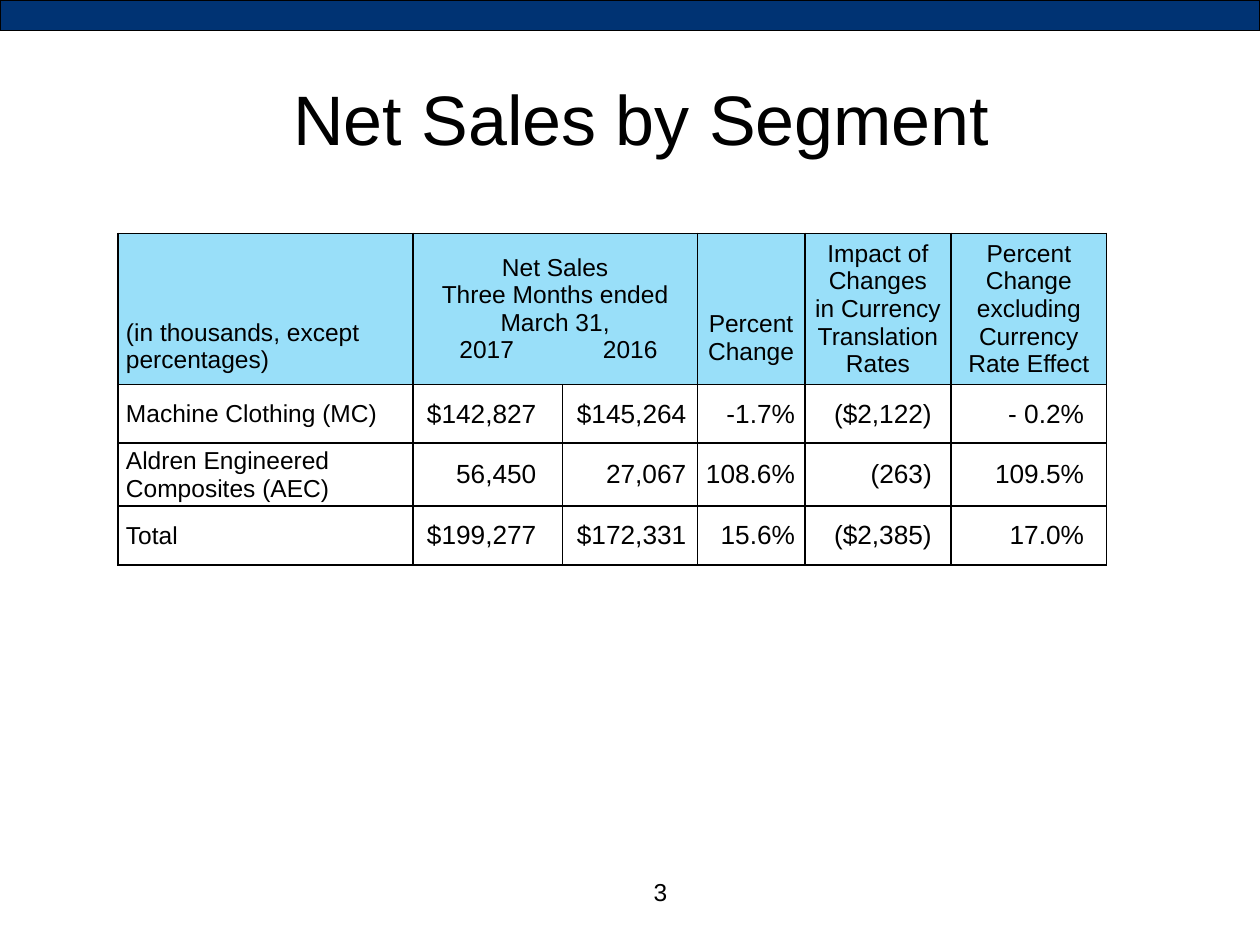
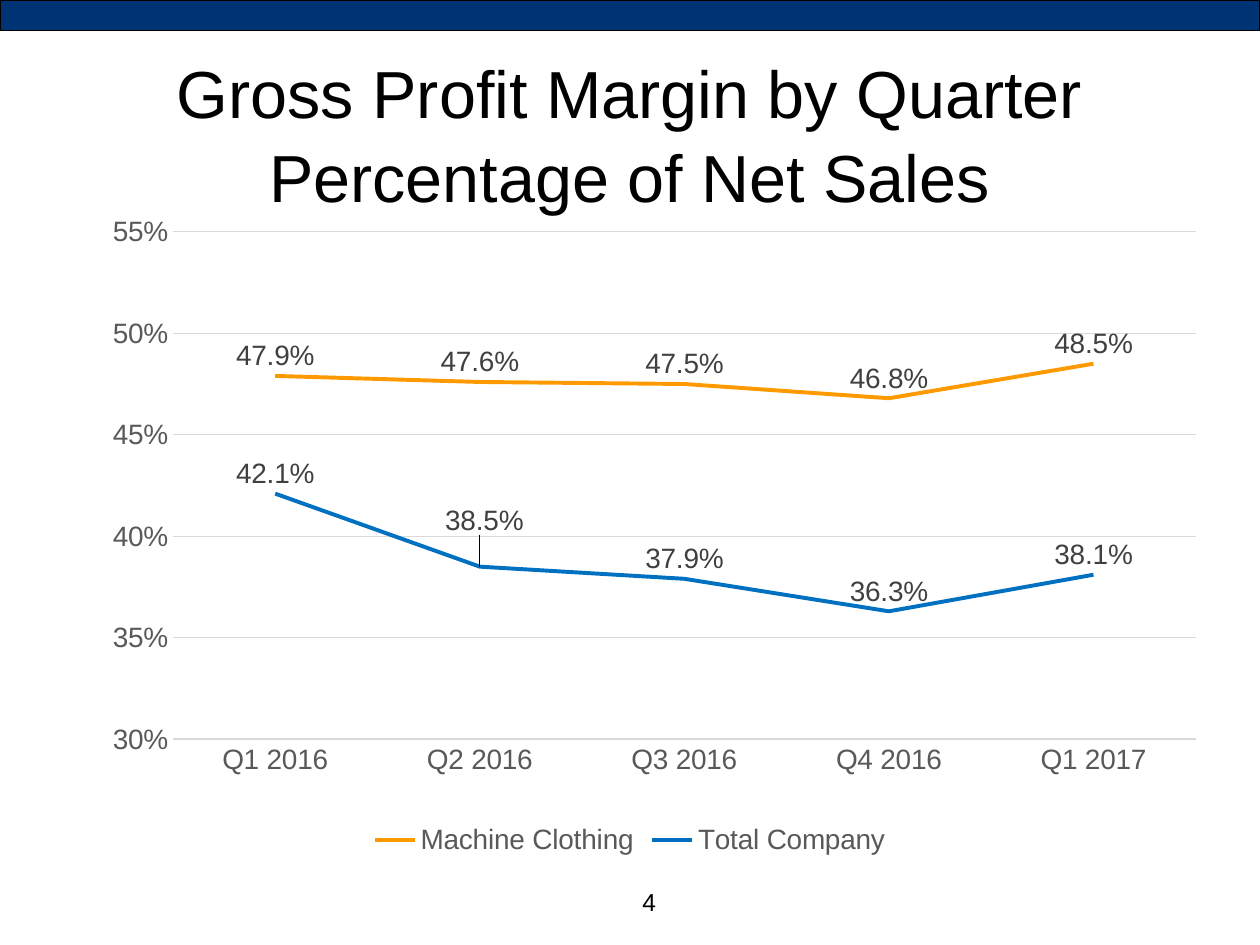
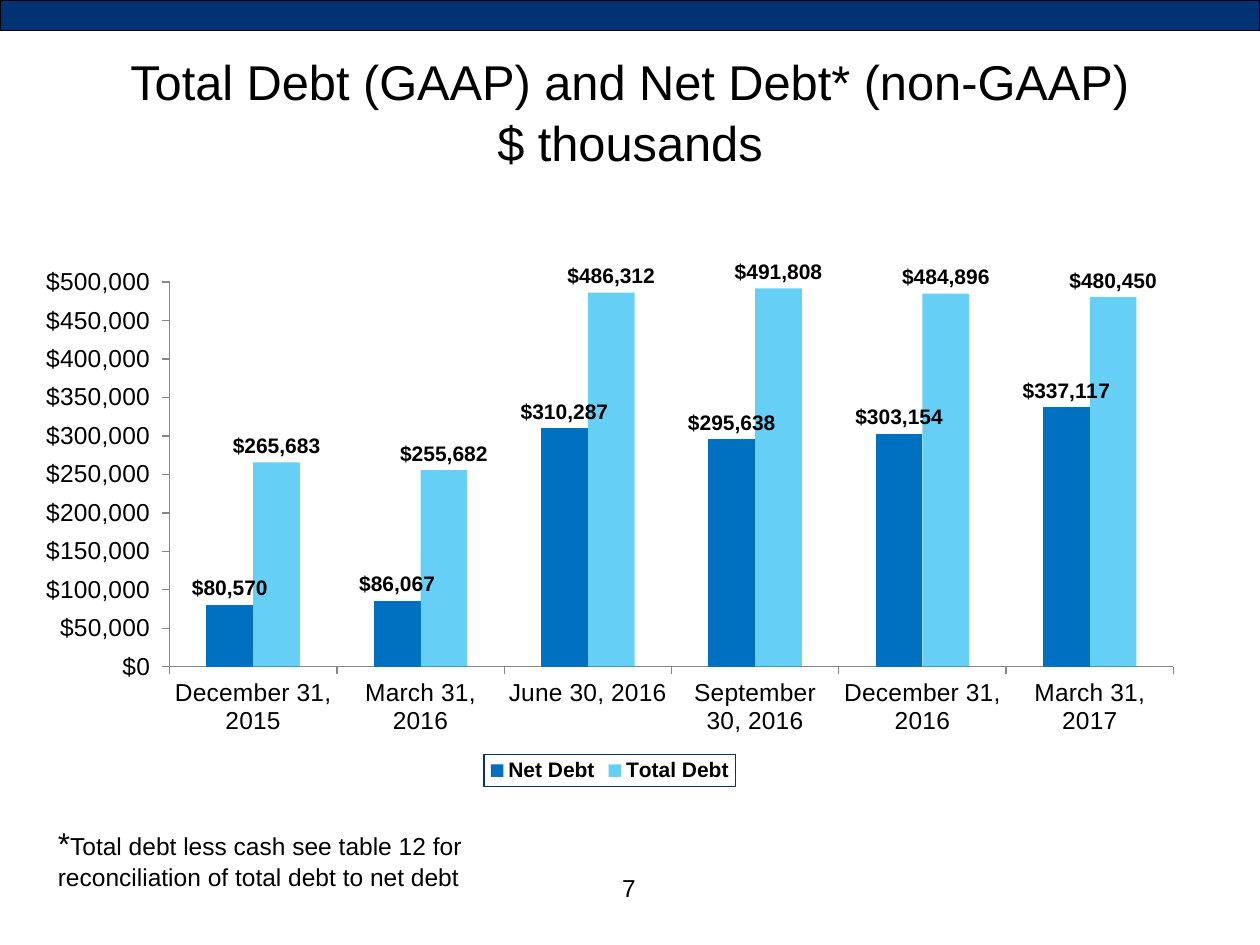
import dataclasses
from typing import Any, NamedTuple, Optional

import lxml.etree
import pptx
import pptx.chart.data
import pptx.dml.color
import pptx.enum.chart
import pptx.enum.shapes
import pptx.enum.text
import pptx.oxml.ns
import pptx.util

Pt = pptx.util.Pt
RGB = pptx.dml.color.RGBColor
Align = pptx.enum.text.PP_ALIGN
Anchor = pptx.enum.text.MSO_ANCHOR
Tick = pptx.enum.chart.XL_TICK_MARK
ChartType = pptx.enum.chart.XL_CHART_TYPE
LabelPosition = pptx.enum.chart.XL_LABEL_POSITION
qn = pptx.oxml.ns.qn


@dataclasses.dataclass(frozen=True)
class Theme:
    font: str = "Arial"
    black: RGB = RGB(0, 0, 0)
    navy: RGB = RGB(0x00, 0x33, 0x73)
    blue: RGB = RGB(0x00, 0x70, 0xC0)
    sky: RGB = RGB(0x00, 0xB0, 0xF0)
    orange: RGB = RGB(0xFF, 0x99, 0x00)
    grid: RGB = RGB(0xD9, 0xD9, 0xD9)
    axis: RGB = RGB(0x86, 0x86, 0x86)
    axis_text: RGB = RGB(0x59, 0x59, 0x59)
    label_text: RGB = RGB(0x40, 0x40, 0x40)
    body: float = 14
    figure: float = 15
    margin_chart: float = 16
    debt_label: float = 12
    asterisk: float = 18


THEME = Theme()


class Box(NamedTuple):
    left: float
    top: float
    width: float
    height: float

    def lengths(self) -> list[pptx.util.Length]:
        return [Pt(value) for value in self]


class Page(NamedTuple):
    title: str
    title_size: float
    title_box: Box
    number: str
    number_box: Box


class Column(NamedTuple):
    width: float
    right_margin: float
    header: list[str]
    anchor: Any = Anchor.MIDDLE
    bottom_margin: float = 0


class Line(NamedTuple):
    """One series of a chart with its colour and opacity in percent."""
    name: str
    values: list[float]
    colour: RGB
    opacity: int = 100


TITLE_BOX = Box(36, 21.6, 648, 90)
SALES = Page("Net Sales by Segment", 40, Box(42.5, 34.6, 648, 90),
             "3", Box(366.5, 497.5, 24.5, 24.5))
MARGIN = Page("Gross Profit Margin by Quarter\vPercentage of Net Sales", 38, TITLE_BOX,
              "4", Box(360, 503.3, 34, 24.5))
DEBT = Page("Total Debt (GAAP) and Net Debt* (non-GAAP)\v$ thousands", 27.9, TITLE_BOX,
            "7", Box(348.5, 495.4, 22.5, 24.5))

YEAR_STOPS = (37.7, 119.7)
SALES_COLUMNS = [
    Column(168.5, 4.5, ["(in thousands, except percentages)"], Anchor.BOTTOM, 6),
    Column(85.5, 15, ["Net Sales", "Three Months ended", "March 31,", "\t2017\t2016"]),
    Column(77, 6.3, []),
    Column(61.5, 5.7, ["Percent", "Change"], Anchor.BOTTOM, 11),
    Column(83.5, 11, ["Impact of Changes", "in Currency", "Translation Rates"]),
    Column(89, 13, ["Percent Change", "excluding Currency Rate Effect"]),
]
SALES_ROWS = [
    ["Machine Clothing (MC)", "$142,827", "$145,264", "-1.7%", "($2,122)", "- 0.2%"],
    ["Aldren Engineered Composites (AEC)", "56,450", "27,067", "108.6%", "(263)", "109.5%"],
    ["Total", "$199,277", "$172,331", "15.6%", "($2,385)", "17.0%"],
]
ROW_HEIGHTS = [86.5, 33.5, 36, 33.5]


def write(para: Any, text: str, *, size: float = THEME.body, align: Any = None,
          spacing: Optional[float] = None) -> None:
    """Append text to a paragraph; a vertical tab breaks the line."""
    if align is not None:
        para.alignment = align
    if spacing is not None:
        para.line_spacing = spacing
    for index, part in enumerate(text.split("\v")):
        if index:
            para.add_line_break()
        span = para.add_run()
        span.text = part
        style_font(span.font, size, THEME.black)


def style_font(font: Any, size: float, colour: RGB, bold: bool = False) -> None:
    font.name = THEME.font
    font.size = Pt(size)
    font.bold = bold
    font.color.rgb = colour


def add_box(slide: Any, box: Box) -> Any:
    frame = slide.shapes.add_textbox(*box.lengths()).text_frame
    frame.word_wrap = True
    return frame


def add_page(deck: Any, page: Page) -> Any:
    """Add a blank slide with the top band, title and page number."""
    slide = deck.slides.add_slide(deck.slide_layouts[6])
    band = slide.shapes.add_shape(pptx.enum.shapes.MSO_SHAPE.RECTANGLE,
                                  *Box(0, 0, 720, 17.3).lengths())
    band.shadow.inherit = False
    band.fill.solid()
    band.fill.fore_color.rgb = THEME.navy
    band.line.color.rgb = THEME.black
    band.line.width = Pt(0.75)
    title = add_box(slide, page.title_box)
    title.margin_top = Pt(6)
    write(title.paragraphs[0], page.title, size=page.title_size, align=Align.CENTER,
          spacing=1.05)
    write(add_box(slide, page.number_box).paragraphs[0], page.number)
    return slide


def add_element(parent: Any, tag: str, **attributes: str) -> Any:
    return lxml.etree.SubElement(parent, qn(tag), attributes)


def fill_colour(fill: Any, properties: Any, colour: RGB, opacity: int) -> None:
    """Fill with a colour; properties is the element that holds the fill."""
    fill.solid()
    fill.fore_color.rgb = colour
    if opacity < 100:
        swatch = properties.find(qn("a:solidFill"))[0]
        add_element(swatch, "a:alpha", val=str(opacity * 1000))


def add_outline(parent: Any, tag: str, colour: RGB, width: float) -> None:
    line = add_element(parent, tag, w=str(Pt(width)))
    add_element(add_element(line, "a:solidFill"), "a:srgbClr", val=str(colour))


def format_cell(cell: Any, column: Column) -> None:
    cell.margin_left = Pt(4.5)
    cell.margin_right = Pt(column.right_margin)
    cell.margin_top = cell.margin_bottom = 0
    cell.vertical_anchor = Anchor.MIDDLE
    for side in "LRTB":
        add_outline(cell._tc.tcPr, f"a:ln{side}", THEME.black, 1)
    cell.fill.background()


def write_header(cell: Any, column: Column, align: Any) -> None:
    cell.margin_right = Pt(4.5)
    cell.margin_bottom = Pt(column.bottom_margin)
    cell.vertical_anchor = column.anchor
    frame = cell.text_frame
    for index, text in enumerate(column.header):
        para = frame.add_paragraph() if index else frame.paragraphs[0]
        if "\t" in text:
            stops = add_element(para._p.get_or_add_pPr(), "a:tabLst")
            for stop in YEAR_STOPS:
                add_element(stops, "a:tab", pos=str(Pt(stop)), algn="ctr")
            write(para, text, align=Align.LEFT)
        else:
            write(para, text, align=align)


def add_sales_table(slide: Any) -> None:
    box = Box(67.5, 133.3, sum(column.width for column in SALES_COLUMNS), sum(ROW_HEIGHTS))
    table = slide.shapes.add_table(len(ROW_HEIGHTS), len(SALES_COLUMNS), *box.lengths()).table
    table.first_row = table.horz_banding = False
    for row, height in zip(table.rows, ROW_HEIGHTS):
        row.height = Pt(height)
    for index, column in enumerate(SALES_COLUMNS):
        table.columns[index].width = Pt(column.width)
        for row in range(len(ROW_HEIGHTS)):
            format_cell(table.cell(row, index), column)
        header = table.cell(0, index)
        fill_colour(header.fill, header._tc.tcPr, THEME.sky, 40)
        write_header(header, column, Align.CENTER if index else Align.LEFT)
        for row, values in enumerate(SALES_ROWS, 1):
            write(table.cell(row, index).text_frame.paragraphs[0], values[index],
                  size=THEME.figure if index else THEME.body,
                  align=Align.RIGHT if index else Align.LEFT)
    table.cell(0, 1).merge(table.cell(0, 2))


def make_layout(**values: str) -> Any:
    """Build a manual chart layout from its settings, in schema order."""
    layout = lxml.etree.Element(qn("c:layout"))
    manual = add_element(layout, "c:manualLayout")
    for name, value in values.items():
        add_element(manual, f"c:{name}", val=value)
    return layout


def place_plot(chart: Any, x: float, y: float, w: float, h: float) -> None:
    area = chart._chartSpace.chart.plotArea
    for old in area.findall(qn("c:layout")):
        area.remove(old)
    area.insert(0, make_layout(layoutTarget="inner", xMode="edge", yMode="edge",
                               x=str(x), y=str(y), w=str(w), h=str(h)))


def add_chart(slide: Any, kind: Any, box: Box, categories: list[str],
              lines: list[Line], size: float, colour: RGB, bold: bool) -> Any:
    """Add a chart whose legend stands at the bottom."""
    data = pptx.chart.data.CategoryChartData()
    data.categories = categories
    for line in lines:
        data.add_series(line.name, line.values)
    chart = slide.shapes.add_chart(kind, *box.lengths(), data).chart
    chart.has_title = False
    chart.has_legend = True
    chart.legend.position = pptx.enum.chart.XL_LEGEND_POSITION.BOTTOM
    chart.legend.include_in_layout = False
    style_font(chart.font, size, colour, bold)
    style_font(chart.legend.font, size, colour, bold)
    chart.plots[0].vary_by_categories = False
    return chart


def format_axis(axis: Any, size: float, colour: RGB, tick: Any,
                line: Optional[RGB]) -> None:
    style_font(axis.tick_labels.font, size, colour)
    axis.major_tick_mark = tick
    axis.minor_tick_mark = Tick.NONE
    if line is None:
        axis.format.line.fill.background()
    else:
        axis.format.line.color.rgb = line
        axis.format.line.width = Pt(0.75)


def scale_axis(axis: Any, low: float, high: float, step: float, number_format: str) -> None:
    axis.minimum_scale, axis.maximum_scale, axis.major_unit = low, high, step
    axis.tick_labels.number_format = number_format
    axis.tick_labels.number_format_is_linked = False


def label_series(series: Any, number_format: str, position: Any, size: float,
                 colour: RGB, bold: bool) -> None:
    labels = series.data_labels
    labels.show_value = True
    labels.number_format = number_format
    labels.number_format_is_linked = False
    labels.position = position
    style_font(labels.font, size, colour, bold)


def shift_label(series: Any, index: int, x: float, y: float, number_format: str) -> None:
    """Move one data label by fractions of the chart's size."""
    label = series.points[index].data_label
    style_font(label.font, THEME.margin_chart, THEME.label_text)
    label.position = LabelPosition.ABOVE
    element = series._element.find(qn("c:dLbls")).find(qn("c:dLbl"))
    element.insert(1, make_layout(x=str(x), y=str(y)))
    code = lxml.etree.Element(qn("c:numFmt"), formatCode=number_format, sourceLinked="0")
    element.insert(2, code)


def add_margin_chart(slide: Any) -> None:
    lines = [Line("Machine Clothing", [0.479, 0.476, 0.475, 0.468, 0.485], THEME.orange),
             Line("Total Company", [0.421, 0.385, 0.379, 0.363, 0.381], THEME.blue)]
    quarters = ["Q1 2016", "Q2 2016", "Q3 2016", "Q4 2016", "Q1 2017"]
    size = THEME.margin_chart
    chart = add_chart(slide, ChartType.LINE, Box(36, 121, 648, 370.8), quarters, lines,
                      size, THEME.axis_text, False)
    place_plot(chart, 0.097, 0.031, 0.902, 0.782)
    format_axis(chart.category_axis, size, THEME.axis_text, Tick.NONE, THEME.grid)
    axis = chart.value_axis
    format_axis(axis, size, THEME.axis_text, Tick.NONE, None)
    scale_axis(axis, 0.3, 0.55, 0.05, "0%")
    axis.major_gridlines.format.line.color.rgb = THEME.grid
    axis.major_gridlines.format.line.width = Pt(0.75)
    for series, line in zip(chart.plots[0].series, lines):
        series.smooth = False
        series.marker.style = pptx.enum.chart.XL_MARKER_STYLE.NONE
        series.format.line.color.rgb = line.colour
        series.format.line.width = Pt(2.25)
        label_series(series, "0.0%", LabelPosition.ABOVE, size, THEME.label_text, False)
    shift_label(chart.plots[0].series[1], 1, 0.004, -0.04, "0.0%")


def add_debt_chart(slide: Any) -> None:
    lines = [Line("Net Debt", [80570, 86067, 310287, 295638, 303154, 337117], THEME.blue),
             Line("Total Debt", [265683, 255682, 486312, 491808, 484896, 480450],
                  THEME.sky, 60)]
    dates = ["December 31, 2015", "March 31, 2016", "June 30, 2016",
             "September 30, 2016", "December 31, 2016", "March 31, 2017"]
    size = THEME.debt_label
    chart = add_chart(slide, ChartType.COLUMN_CLUSTERED, Box(13, 147.6, 671, 302.4), dates,
                      lines, size, THEME.black, True)
    place_plot(chart, 0.125, 0.045, 0.855, 0.728)
    for axis in (chart.category_axis, chart.value_axis):
        format_axis(axis, THEME.body, THEME.black, Tick.OUTSIDE, THEME.axis)
    scale_axis(chart.value_axis, 0, 500000, 50000, '"$"#,##0_)')
    chart.value_axis.has_major_gridlines = False
    chart.plots[0].gap_width = 158
    chart.plots[0].overlap = 0
    for series, line in zip(chart.plots[0].series, lines):
        properties = series._element.get_or_add_spPr()
        fill_colour(series.format.fill, properties, line.colour, line.opacity)
        label_series(series, '"$"#,##0', LabelPosition.OUTSIDE_END, size, THEME.black, True)
    frame = lxml.etree.Element(qn("c:spPr"))
    add_outline(frame, "a:ln", THEME.navy, 0.75)
    chart.legend._element.find(qn("c:txPr")).addprevious(frame)


def main() -> None:
    deck = pptx.Presentation()
    deck.slide_width, deck.slide_height = Pt(720), Pt(540)
    add_sales_table(add_page(deck, SALES))
    add_margin_chart(add_page(deck, MARGIN))
    debt_slide = add_page(deck, DEBT)
    add_debt_chart(debt_slide)
    footnote = add_box(debt_slide, Box(26, 467.3, 313, 46)).paragraphs[0]
    write(footnote, "*", size=THEME.asterisk)
    write(footnote, "Total debt less cash see table 12 for reconciliation of "
                    "total debt to net debt")
    deck.save("out.pptx")


if __name__ == "__main__":
    main()
